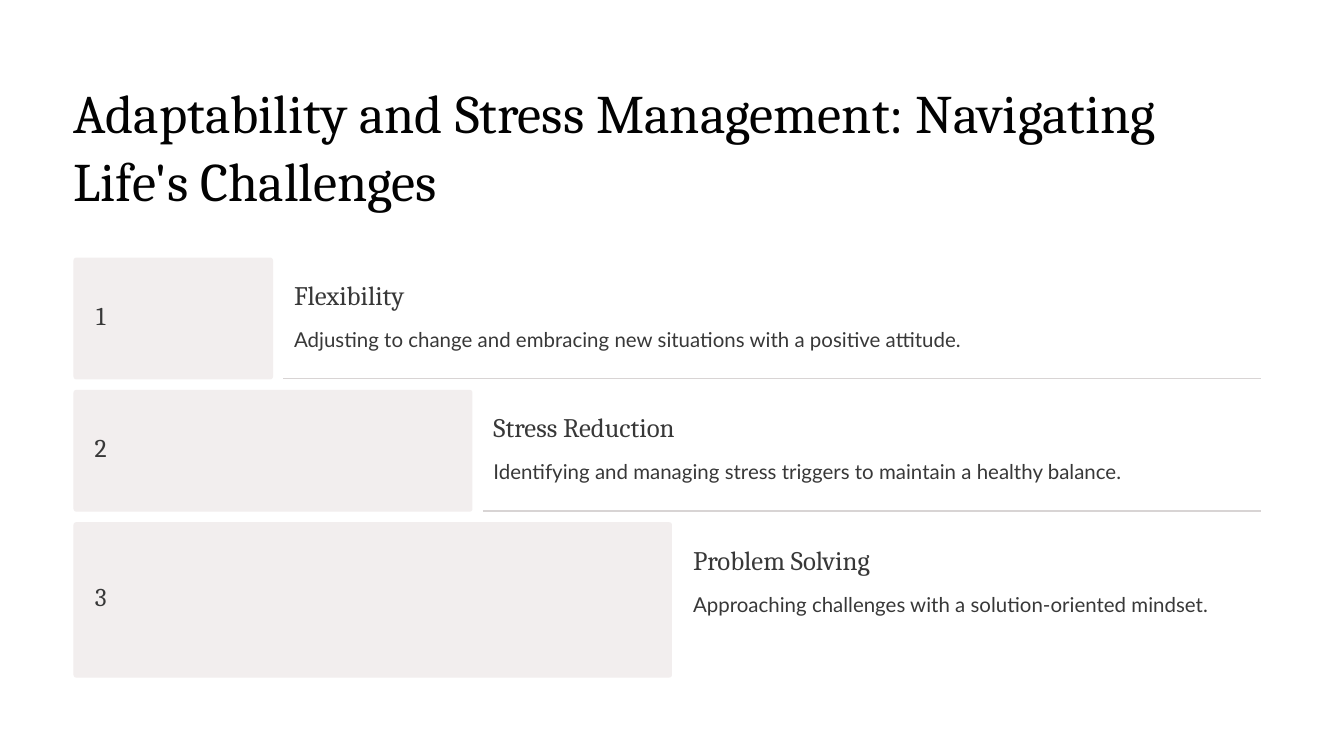
from lxml.etree import SubElement
from pptx import Presentation
from pptx.dml.color import RGBColor
from pptx.enum.shapes import MSO_CONNECTOR, MSO_SHAPE
from pptx.enum.text import MSO_ANCHOR, MSO_AUTO_SIZE, PP_ALIGN
from pptx.oxml.ns import qn
from pptx.util import Emu, Pt

# Content: heading, body, bar height, body width, body height
TITLE = "Adaptability and Stress Management: Navigating Life's Challenges"
STEPS = [
    ("Flexibility",
     "Adjusting to change and embracing new situations with a positive attitude.",
     174, 1027, 58),
    ("Stress Reduction",
     "Identifying and managing stress triggers to maintain a healthy balance.",
     174, 972, 58),
    ("Problem Solving",
     "Approaching challenges with a solution-oriented mindset.",
     222, 796, 106),
]

# Layout in px, 96 to the inch
LEFT, RIGHT, TOP = 105, 1801, 368
STEP, GAP, RADIUS = 285, 15, 4
SERIF, SANS = "Cambria", "Lato"
INK, BLACK, PALE, RULE = "383838", "020202", "F2EEEE", "D8D4D4"


def px(n):
    return Emu(round(n * 9525))


def color(code):
    return RGBColor.from_string(code)


def style(shape, text, font, size, lead, code=INK, align=PP_ALIGN.LEFT):
    frame = shape.text_frame
    frame.text = text
    frame.word_wrap = True
    frame.auto_size = MSO_AUTO_SIZE.NONE
    frame.vertical_anchor = MSO_ANCHOR.TOP
    frame.margin_left = frame.margin_right = 0
    frame.margin_top = frame.margin_bottom = 0
    para = frame.paragraphs[0]
    para.alignment = align
    para.line_spacing = Pt(lead)
    para.space_before = Pt(0)
    para.font.name = font
    para.font.size = Pt(size)
    para.font.color.rgb = color(code)


def label(slide, x, y, w, h, *look, **more):
    box = slide.shapes.add_textbox(px(x), px(y), px(w), px(h))
    style(box, *look, **more)


def bar(slide, x, y, w, h):
    shape = slide.shapes.add_shape(
        MSO_SHAPE.ROUNDED_RECTANGLE, px(x), px(y), px(w), px(h))
    shape.adjustments[0] = RADIUS / min(w, h)
    shape.shadow.inherit = False
    shape.fill.solid()
    shape.fill.fore_color.rgb = color(PALE)
    shape.line.fill.background()


def rule(slide, x, y, end):
    line = slide.shapes.add_connector(
        MSO_CONNECTOR.STRAIGHT, px(x), px(y), px(end), px(y))
    line.line.color.rgb = color(RULE)
    line.line.width = Pt(1.5)
    SubElement(line._element.spPr, qn("a:effectLst"))


def main():
    deck = Presentation()
    deck.slide_width, deck.slide_height = px(1920), px(1080)
    slide = deck.slides.add_slide(deck.slide_layouts[5])
    slide.background.fill.solid()
    slide.background.fill.fore_color.rgb = color("FFFFFF")

    # Title
    title = slide.shapes.title
    title.left, title.top = px(LEFT), px(109)
    title.width, title.height = px(1712), px(200)
    style(title, TITLE, SERIF, 58.1, 73.1, BLACK)

    # Staircase of numbered bars
    y = TOP
    for num, (head, body, high, wide, deep) in enumerate(STEPS, 1):
        edge = LEFT + num * STEP
        x = edge + 2 * GAP
        bar(slide, LEFT, y, num * STEP, high)
        label(slide, LEFT + 29, y + high / 2 - 42, 20, 71,
              str(num), SERIF, 27.5, 44.4, align=PP_ALIGN.CENTER)
        label(slide, x, y + 28, 391, 51, head, SERIF, 28.7, 36.2)
        label(slide, x, y + 87, wide, deep, body, SANS, 21.9, 35.6)
        if num < len(STEPS):
            rule(slide, edge + GAP, y + high - 1, RIGHT)
        y += high + GAP

    deck.save("out.pptx")


if __name__ == "__main__":
    main()
